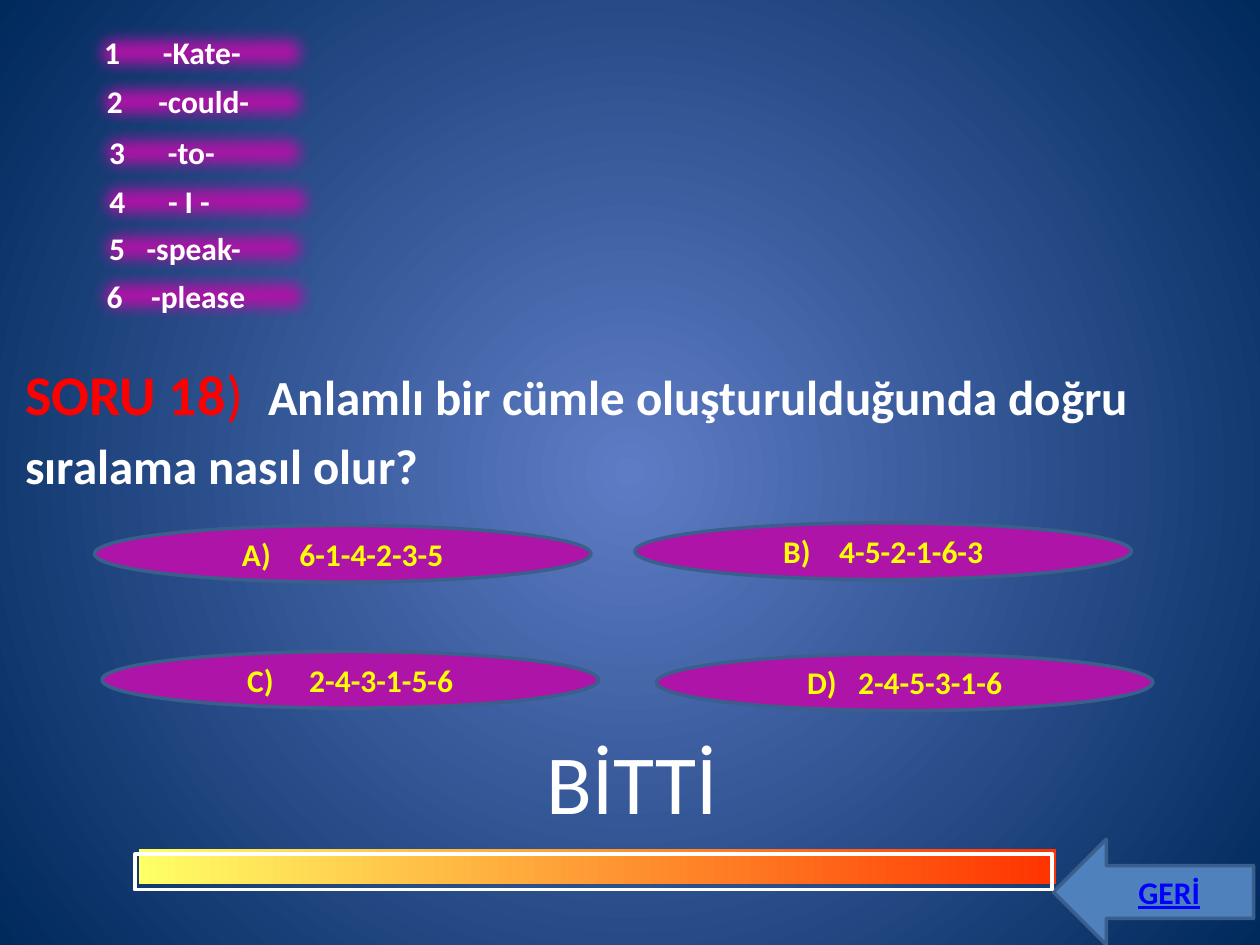
from lxml.etree import SubElement
from pptx import Presentation
from pptx.dml.color import RGBColor
from pptx.enum.shapes import MSO_SHAPE
from pptx.enum.text import MSO_ANCHOR, MSO_AUTO_SIZE, PP_ALIGN
from pptx.oxml.ns import qn
from pptx.util import Inches, Pt

COLORS = {"purple": "AE14A7", "edge": "3A5F8C", "white": "FFFFFF", "yellow": "FFFF00",
          "red": "FF0000", "link": "0000FF", "arrow": "4F81BD",
          "bar_start": "FFFF66", "bar_end": "FF3300",
          "glow": "5E7CC5", "night": "00295C"}
SPACE_WIDTH = 0.226  # width of a Calibri space, in ems

# Number, gap in spaces, word, box position and width, outline
WORDS = [
    ("1", 6, "-Kate-", 0.71, 0.22, 1.77, "purple"),
    ("2", 5, "-could-", 0.73, 0.61, 1.75, "edge"),
    ("3", 6, "-to-", 0.75, 1.01, 1.73, "edge"),
    ("4", 6, "- I -", 0.75, 1.40, 1.78, "edge"),
    ("5", 3, "-speak-", 0.75, 1.77, 1.73, "edge"),
    ("6", 4, "-please", 0.73, 2.15, 1.77, "edge"),
]
# Letter, gap in spaces, order, oval position
ANSWERS = [
    ("A)", 4, "6-1-4-2-3-5", 0.75, 4.17),
    ("B)", 4, "4-5-2-1-6-3", 5.04, 4.15),
    ("C)", 5, "2-4-3-1-5-6", 0.81, 5.17),
    ("D)", 3, "2-4-5-3-1-6", 5.21, 5.19),
]
QUESTION = "Anlamlı bir cümle oluşturulduğunda doğru sıralama nasıl olur?"


def rgb(name):
    return RGBColor.from_string(COLORS[name])


def add_span(para, text, size, color, **formats):
    span = para.add_run()
    span.text = text
    span.font.color.rgb = rgb(color)
    for name, value in {"name": "Calibri", "size": Pt(size), **formats}.items():
        setattr(span.font, name, value)
    return span


def add_gap(para, spaces, size, color):
    """One space, widened by letter spacing to the width of several."""
    span = add_span(para, " ", size, color)
    extra = (spaces - 1) * SPACE_WIDTH * size
    span.font._element.set("spc", str(round(extra * 100)))


def add_item(box, label, spaces, text, color, align):
    box.text_frame.vertical_anchor = MSO_ANCHOR.MIDDLE
    para = box.text_frame.paragraphs[0]
    para.alignment = align
    add_span(para, label, 18, color, bold=True)
    add_gap(para, spaces, 18, color)
    add_span(para, text, 18, color, bold=True)


def add_box(page, kind, place, fill=None, line=None, width=2):
    box = page.shapes.add_shape(kind, *map(Inches, place))
    box.shadow.inherit = False
    if fill:
        box.fill.solid()
        box.fill.fore_color.rgb = rgb(fill)
    else:
        box.fill.background()
    if line:
        box.line.color.rgb = rgb(line)
        box.line.width = Pt(width)
    else:
        box.line.fill.background()
    return box


def add_label(page, place, text, size, color, wrap, align, **formats):
    frame = page.shapes.add_textbox(*map(Inches, place)).text_frame
    frame.word_wrap = wrap
    frame.auto_size = MSO_AUTO_SIZE.SHAPE_TO_FIT_TEXT
    frame.paragraphs[0].alignment = align
    add_span(frame.paragraphs[0], text, size, color, **formats)


def set_gradient(fill, start, end):
    fill.gradient()
    for stop, color, position in zip(fill.gradient_stops, (start, end), (0, 1)):
        stop.color.rgb = rgb(color)
        stop.position = position


def soften_edges(box, radius):
    effects = box.element.spPr.find(qn("a:effectLst"))
    SubElement(effects, qn("a:softEdge"), rad=str(Inches(radius)))


def main():
    deck = Presentation()
    deck.slide_width, deck.slide_height = Inches(10), Inches(7.5)
    page = deck.slides.add_slide(deck.slide_layouts[5])

    # Background: radial gradient from the centre
    set_gradient(page.background.fill, "glow", "night")
    gradient = next(page.element.iter(qn("a:gradFill")))
    gradient.remove(gradient.find(qn("a:lin")))
    radial = SubElement(gradient, qn("a:path"), path="circle")
    SubElement(radial, qn("a:fillToRect"), l="50000", t="50000", r="50000", b="50000")

    # Question
    title = page.shapes.title
    for name, value in zip(("left", "top", "width", "height"), (0.1, 2.72, 9.57, 1.26)):
        setattr(title, name, Inches(value))
    frame = title.text_frame
    frame.auto_size = MSO_AUTO_SIZE.NONE
    frame.vertical_anchor = MSO_ANCHOR.MIDDLE
    para = frame.paragraphs[0]
    formats = {"alignment": PP_ALIGN.LEFT, "line_spacing": 1.15,
               "space_before": Pt(6), "space_after": Pt(10)}
    for name, value in formats.items():
        setattr(para, name, value)
    add_span(para, "SORU 18", 32, "red", bold=True)
    add_span(para, ")", 32, "red", bold=False)
    add_gap(para, 2, 32, "red")
    add_span(para, QUESTION, 28, "white", bold=True)

    # Back arrow
    add_box(page, MSO_SHAPE.LEFT_ARROW, (8.36, 6.66, 1.59, 0.84), "arrow", "edge")
    add_label(page, (8.61, 6.88, 1.34, 0.4), "GERİ", 18, "link", True,
              PP_ALIGN.CENTER, bold=True, underline=True)

    # Gradient bar with an offset frame
    bar = add_box(page, MSO_SHAPE.RECTANGLE, (1.1, 6.74, 7.28, 0.28))
    set_gradient(bar.fill, "bar_start", "bar_end")
    bar.fill.gradient_angle = 0
    add_box(page, MSO_SHAPE.RECTANGLE, (1.07, 6.78, 7.28, 0.28), None, "white", 2.25)
    add_label(page, (4.24, 5.75, 1.57, 0.91), "BİTTİ", 48, "white", False, PP_ALIGN.LEFT)

    # Numbered words
    for number, spaces, word, left, top, width, line in WORDS:
        box = add_box(page, MSO_SHAPE.ROUNDED_RECTANGLE, (left, top, width, 0.39),
                      "purple", line)
        soften_edges(box, 0.12)
        add_item(box, number, spaces, word, "white", PP_ALIGN.LEFT)

    # Answers
    for letter, spaces, order, left, top in ANSWERS:
        oval = add_box(page, MSO_SHAPE.OVAL, (left, top, 3.94, 0.45), "purple", "edge")
        add_item(oval, letter, spaces, order, "yellow", PP_ALIGN.CENTER)

    deck.save("out.pptx")


if __name__ == "__main__":
    main()
